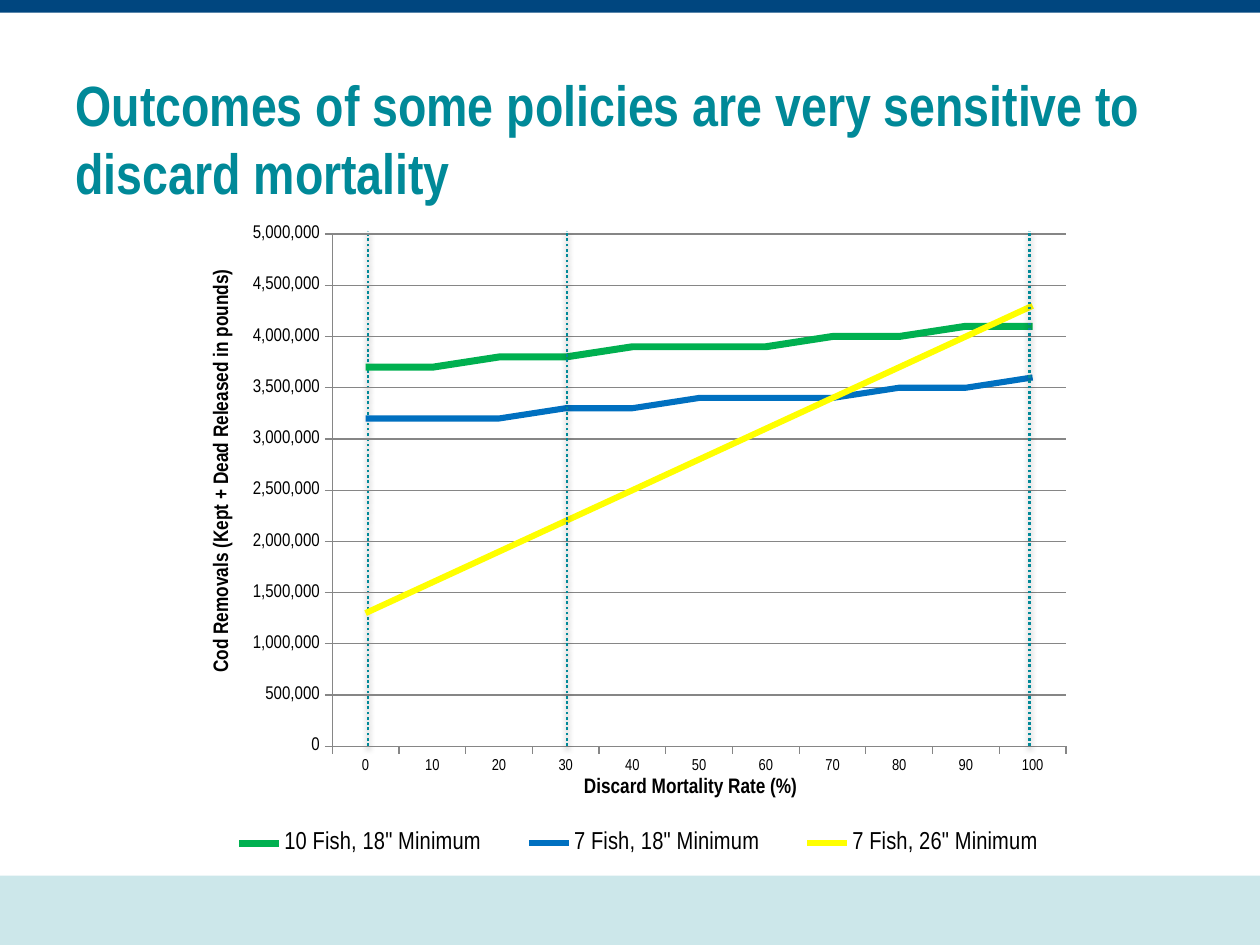
from pptx import Presentation
from pptx.chart.data import CategoryChartData
from pptx.dml.color import RGBColor
from pptx.enum.chart import XL_CHART_TYPE, XL_LEGEND_POSITION, XL_MARKER_STYLE, XL_TICK_MARK
from pptx.enum.dml import MSO_LINE
from pptx.enum.shapes import MSO_CONNECTOR, MSO_SHAPE
from pptx.enum.text import MSO_ANCHOR, MSO_AUTO_SIZE, PP_ALIGN
from pptx.oxml import parse_xml
from pptx.oxml.ns import nsdecls, qn
from pptx.util import Inches, Pt

FONT = "Arial Narrow"
TEAL = "008998"
TITLE = "Outcomes of some policies are very sensitive to discard mortality"
BANDS = [(6.95, 0.55, "CCE7EA"), (0, 0.1, "00467F")]
RATES = range(0, 101, 10)
SERIES = [
    ('10 Fish, 18" Minimum', 3670000, 4130000, "00B050", 4),
    ('7 Fish, 18" Minimum', 3150000, 3550000, "0070C0", 3.5),
    ('7 Fish, 26" Minimum', 1300000, 4300000, "FFFF00", 3.5),
]
RATE_TITLE = "Discard Mortality Rate (%)"
REMOVALS_TITLE = "Cod Removals (Kept + Dead Released in pounds)"
MARKED_RATES = [(2.92, "behind"), (8.17, "front"), (4.5, "front")]


def color(value):
    """Turn a hex string into a colour."""
    return RGBColor.from_string(value)


def style_font(font, size, bold=False, value="000000"):
    """Set the typeface, size, weight and colour of a font."""
    font.name, font.size, font.bold = FONT, Pt(size), bold
    font.color.rgb = color(value)


def place(element, index, x, y, width=None, height=None, inner=False):
    """Give a chart part a manual layout in fractions of the chart."""
    for old in element.findall(qn("c:layout")):
        element.remove(old)
    target = '<c:layoutTarget val="inner"/>' if inner else ""
    modes = '<c:xMode val="edge"/><c:yMode val="edge"/>'
    sizes = [("x", x), ("y", y), ("w", width), ("h", height)]
    values = "".join(f'<c:{tag} val="{size}"/>' for tag, size in sizes if size is not None)
    element.insert(index, parse_xml(
        f'<c:layout {nsdecls("c")}><c:manualLayout>{target}{modes}{values}'
        "</c:manualLayout></c:layout>"))


def add_band(page, top, height, fill):
    """Add a full-width colour band."""
    band = page.shapes.add_shape(
        MSO_SHAPE.RECTANGLE, 0, Inches(top), Inches(10), Inches(height))
    band.shadow.inherit = False
    band.fill.solid()
    band.fill.fore_color.rgb = color(fill)
    band.line.fill.background()


def add_marker(page, x):
    """Add a dotted vertical line at a discard rate."""
    marker = page.shapes.add_connector(
        MSO_CONNECTOR.STRAIGHT, Inches(x), Inches(5.92), Inches(x), Inches(1.83))
    marker.line.color.rgb = color(TEAL)
    marker.line.width = Pt(1.5)
    marker.line.dash_style = MSO_LINE.ROUND_DOT
    marker._element.spPr.append(parse_xml(
        f'<a:effectLst {nsdecls("a")}><a:outerShdw blurRad="{Pt(3.1)}" dist="{Pt(1.6)}" '
        'dir="5400000" rotWithShape="0"><a:srgbClr val="000000"><a:alpha val="38000"/>'
        "</a:srgbClr></a:outerShdw></a:effectLst>"))


def style_axis(axis, title, size, x, y):
    """Style an axis and place its title."""
    axis.has_title = True
    axis.axis_title.text_frame.text = title
    style_font(axis.axis_title.text_frame.paragraphs[0].font, 12, True)
    place(axis.axis_title._element, 1, x, y)
    style_font(axis.tick_labels.font, size)
    axis.major_tick_mark = XL_TICK_MARK.OUTSIDE
    axis.minor_tick_mark = XL_TICK_MARK.NONE
    axis.format.line.color.rgb = color("868686")
    axis.format.line.width = Pt(0.75)


def add_chart(page):
    """Add the line chart of cod removals."""
    data = CategoryChartData(number_format="#,##0")
    data.categories = [str(rate) for rate in RATES]
    for name, first, last, _, _ in SERIES:
        data.add_series(name, [
            round(first + (last - first) * rate / 100, -5) for rate in RATES])
    chart = page.shapes.add_chart(
        XL_CHART_TYPE.LINE, Inches(1.58), Inches(1.67), Inches(7), Inches(5.22), data).chart
    style_font(chart.font, 9)
    chart.has_title = False
    plot = chart.plots[0]
    plot.vary_by_categories = False
    place(chart._chartSpace.chart.plotArea, 0, 0.151, 0.036, 0.832, 0.779, True)
    for series, (_, _, _, stroke, width) in zip(plot.series, SERIES):
        series.smooth = False
        series.marker.style = XL_MARKER_STYLE.NONE
        series.format.line.color.rgb = color(stroke)
        series.format.line.width = Pt(width)
    style_axis(chart.category_axis, RATE_TITLE, 9, 0.432, 0.853)
    removals = chart.value_axis
    style_axis(removals, REMOVALS_TITLE, 10.5, 0.008, 0.084)
    removals.minimum_scale, removals.maximum_scale = 0, 5000000
    removals.major_unit = 500000
    removals.tick_labels.number_format = "#,##0"
    removals.tick_labels.number_format_is_linked = False
    removals.major_gridlines.format.line.color.rgb = color("868686")
    removals.major_gridlines.format.line.width = Pt(0.75)
    chart.has_legend = True
    chart.legend.position = XL_LEGEND_POSITION.BOTTOM
    chart.legend.include_in_layout = False
    style_font(chart.legend.font, 14)
    place(chart.legend._element, 1, 0.001, 0.932, 0.995, 0.06)


def add_title(page):
    """Move and format the title."""
    title = page.shapes.title
    title.left, title.top = Inches(0.5), Inches(0.5)
    title.width, title.height = Inches(9), Inches(0.74)
    frame = title.text_frame
    frame.text = TITLE
    frame.word_wrap = True
    frame.auto_size = MSO_AUTO_SIZE.NONE
    frame.vertical_anchor = MSO_ANCHOR.TOP
    frame.margin_top = Inches(0.05)
    para = frame.paragraphs[0]
    para.alignment = PP_ALIGN.LEFT
    para.space_before = Pt(0)
    style_font(para.font, 32.4, True, TEAL)


def main():
    """Build the slide and save it."""
    deck = Presentation()
    deck.slide_width, deck.slide_height = Inches(10), Inches(7.5)
    page = deck.slides.add_slide(deck.slide_layouts[5])
    for band in BANDS:
        add_band(page, *band)
    add_title(page)
    for layer in ("behind", "front"):
        if layer == "front":
            add_chart(page)
        for x, side in MARKED_RATES:
            if side == layer:
                add_marker(page, x)
    deck.save("out.pptx")


if __name__ == "__main__":
    main()
